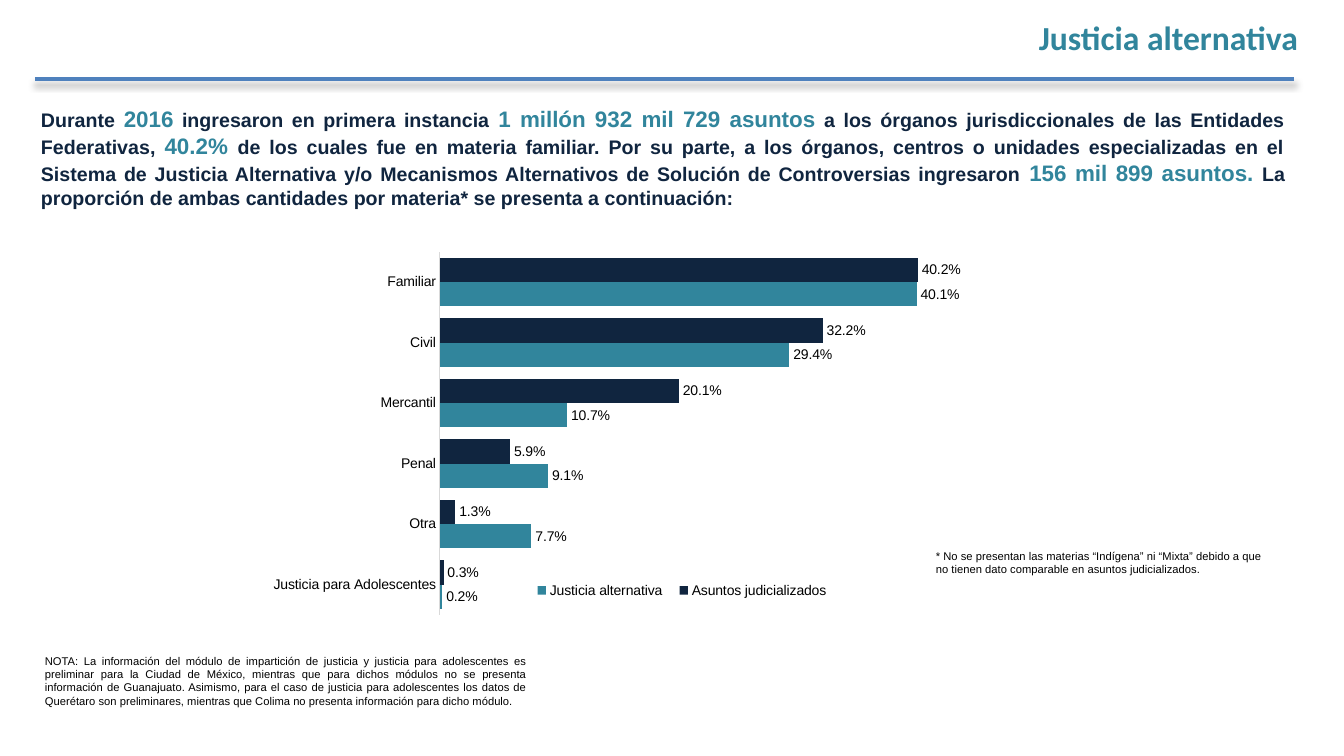
"""Build the slide on alternative justice: cases by subject matter, with a bar chart."""
from lxml.etree import SubElement
from pptx import Presentation
from pptx.chart.data import CategoryChartData
from pptx.dml.color import RGBColor
from pptx.enum.chart import XL_CHART_TYPE, XL_LABEL_POSITION, XL_LEGEND_POSITION, XL_TICK_MARK
from pptx.enum.shapes import MSO_CONNECTOR
from pptx.enum.text import MSO_AUTO_SIZE, PP_ALIGN
from pptx.oxml import parse_xml
from pptx.oxml.ns import nsdecls, qn
from pptx.util import Pt

PX = 914400 / 100.8
COLORS = {"teal": "31859C", "navy": "10253F", "black": "000000", "rule": "4F81BD", "axis": "D9D9D9"}


def rgb(name):
    return RGBColor.from_string(COLORS[name])


def add_text(runs, box, size=8, color="black", font="Arial", bold=False, align=PP_ALIGN.LEFT, wrap=True):
    if isinstance(runs, str):
        runs = [(runs, size, color)]
    frame = slide.shapes.add_textbox(*(round(v * PX) for v in box)).text_frame
    frame.word_wrap = wrap
    frame.auto_size = MSO_AUTO_SIZE.SHAPE_TO_FIT_TEXT
    paragraph = frame.paragraphs[0]
    paragraph.alignment = align
    for words, run_size, run_color in runs:
        run = paragraph.add_run()
        run.text = words
        run.font.name = font
        run.font.size = Pt(run_size)
        run.font.bold = bold
        run.font.color.rgb = rgb(run_color)


prs = Presentation()
prs.slide_width = round(1344 * PX)
prs.slide_height = round(756 * PX)
slide = prs.slides.add_slide(prs.slide_layouts[6])

add_text("Justicia alternativa", (1025, 12, 283, 50), size=24, color="teal", font="Calibri",
         bold=True, align=PP_ALIGN.RIGHT, wrap=False)

title_rule = slide.shapes.add_connector(
    MSO_CONNECTOR.STRAIGHT, *(round(v * PX) for v in (35, 79, 1294, 79)))
title_rule.line.color.rgb = rgb("rule")
title_rule.line.width = Pt(3)
title_rule._element.spPr.append(parse_xml(
    f'<a:effectLst {nsdecls("a")}><a:outerShdw blurRad="{Pt(5)}" dist="{Pt(3)}" dir="5400000" '
    f'rotWithShape="0"><a:srgbClr val="{COLORS["black"]}"><a:alpha val="40000"/></a:srgbClr>'
    '</a:outerShdw></a:effectLst>'))

add_text("* No se presentan las materias “Indígena” ni “Mixta” debido a que no tienen dato "
         "comparable en asuntos judicializados.", (926, 544, 349, 37))

plain, key = (14, "navy"), (16, "teal")
add_text([
    ("Durante ", *plain),
    ("2016", *key),
    (" ingresaron en primera instancia ", *plain),
    ("1 millón 932 mil 729 asuntos", *key),
    (" a los órganos jurisdiccionales de las Entidades Federativas, ", *plain),
    ("40.2% ", *key),
    ("de los cuales fue en materia familiar. Por su parte, a los órganos, centros o unidades "
     "especializadas en el Sistema de Justicia Alternativa y/o Mecanismos Alternativos de "
     "Solución de Controversias ingresaron ", *plain),
    ("156 mil 899 asuntos. ", *key),
    ("La proporción de ambas cantidades por materia* se presenta a continuación:", *plain),
], (31, 100, 1264, 115), bold=True, align=PP_ALIGN.JUSTIFY)

shares = CategoryChartData(number_format="0.0%")
shares.categories = ["Familiar", "Civil", "Mercantil", "Penal", "Otra", "Justicia para Adolescentes"]
shares.add_series("Asuntos judicializados", [0.402, 0.322, 0.201, 0.059, 0.013, 0.003])
shares.add_series("Justicia alternativa", [0.401, 0.294, 0.107, 0.091, 0.077, 0.002])
chart_box = (259, 244, 730, 411)
chart = slide.shapes.add_chart(
    XL_CHART_TYPE.BAR_CLUSTERED, *(round(v * PX) for v in chart_box), shares).chart
chart.has_title = False
chart.font.name = "Arial"
chart.font.size = Pt(10)
chart.font.color.rgb = rgb("black")

matters = chart.category_axis
matters.reverse_order = True
matters.major_tick_mark = XL_TICK_MARK.NONE
matters.format.line.color.rgb = rgb("axis")
matters.format.line.width = Pt(0.75)
share_axis = chart.value_axis
share_axis.visible = False
share_axis.has_major_gridlines = False
share_axis.minimum_scale = 0
share_axis.maximum_scale = 0.45

bars = chart.plots[0]
bars.gap_width = 50
bars.overlap = 0
bars.vary_by_categories = False
for series, color in zip(bars.series, ("navy", "teal")):
    series.format.fill.solid()
    series.format.fill.fore_color.rgb = rgb(color)
    series.invert_if_negative = False
    labels = series.data_labels
    labels.show_value = True
    labels.number_format = "0.0%"
    labels.number_format_is_linked = False
    labels.position = XL_LABEL_POSITION.OUTSIDE_END
    labels.font.name = "Arial"
    labels.font.size = Pt(10)
    labels.font.color.rgb = rgb("black")

chart.has_legend = True
legend = chart.legend
legend.position = XL_LEGEND_POSITION.BOTTOM
legend.include_in_layout = False
legend.font.name = "Arial"
legend.font.size = Pt(10)
legend.font.color.rgb = rgb("black")

plot_area = chart._chartSpace.chart.plotArea
for old_layout in plot_area.findall(qn("c:layout")):
    plot_area.remove(old_layout)
for old_layout in legend._element.findall(qn("c:layout")):
    legend._element.remove(old_layout)
left, top, width, height = chart_box
for parent, index, target, box in (
        (plot_area, 0, "inner", (440, 252, 535, 363)),
        (legend._element, 1, None, (525, 578, 314, 25))):
    layout = parse_xml(f'<c:layout {nsdecls("c")}><c:manualLayout/></c:layout>')
    fractions = ((box[0] - left) / width, (box[1] - top) / height, box[2] / width, box[3] / height)
    settings = [("layoutTarget", target)] if target else []
    settings += [("xMode", "edge"), ("yMode", "edge"), *zip("xywh", fractions)]
    for tag, value in settings:
        SubElement(layout[0], qn(f"c:{tag}"), val=str(value))
    parent.insert(index, layout)

add_text("NOTA: La información del módulo de impartición de justicia y justicia para adolescentes es "
         "preliminar para la Ciudad de México, mientras que para dichos módulos no se presenta "
         "información de Guanajuato. Asimismo, para el caso de justicia para adolescentes los datos "
         "de Querétaro son preliminares, mientras que Colima no presenta información para dicho módulo.",
         (35, 649, 502, 65), align=PP_ALIGN.JUSTIFY)

prs.save("out.pptx")
